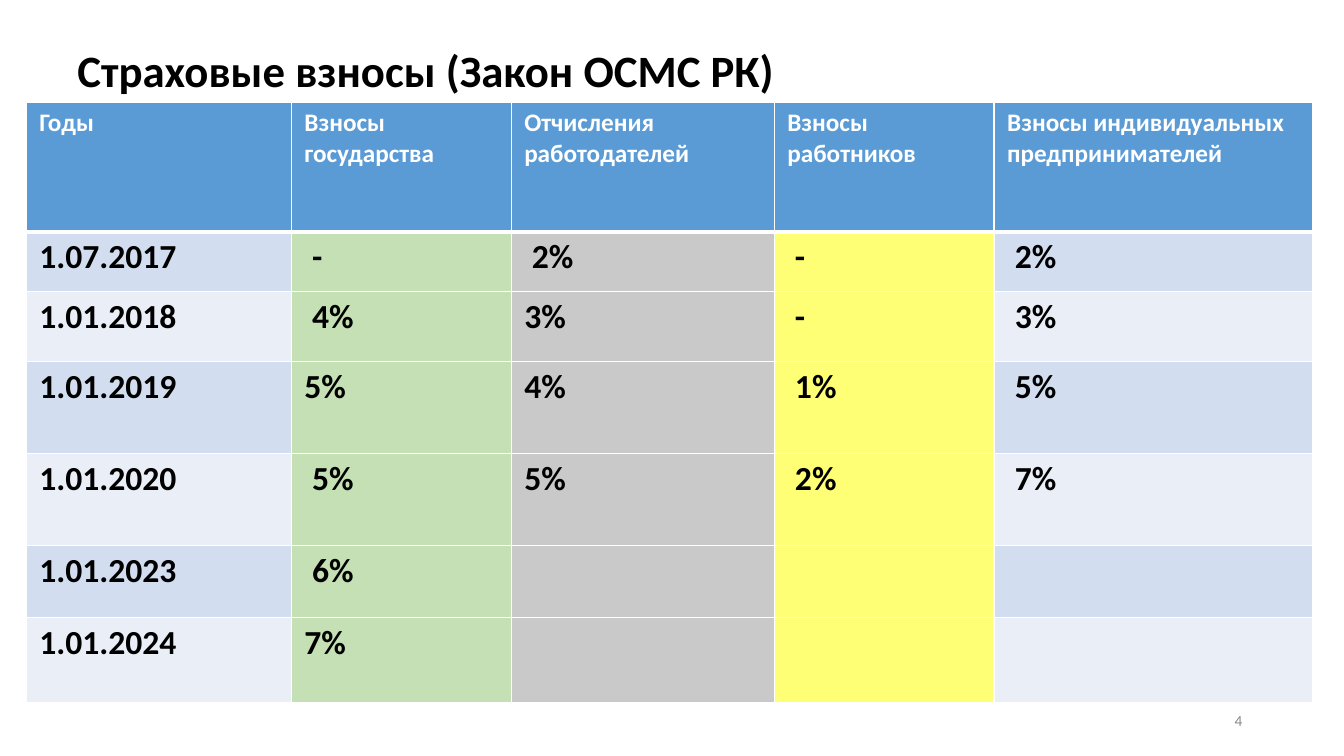
import lxml.etree
import pptx
import pptx.dml.color
import pptx.enum.text
import pptx.oxml.ns
import pptx.util

Inches = pptx.util.Inches
RGBColor = pptx.dml.color.RGBColor
Align = pptx.enum.text.PP_ALIGN
Anchor = pptx.enum.text.MSO_ANCHOR

FONT = "Calibri"
BLACK = RGBColor(0x00, 0x00, 0x00)
WHITE = RGBColor(0xFF, 0xFF, 0xFF)
GRAY = RGBColor(0x8C, 0x8C, 0x8C)
HEADER_BLUE = RGBColor(0x5B, 0x9B, 0xD5)
BAND_DARK = RGBColor(0xD2, 0xDE, 0xEF)
BAND_LIGHT = RGBColor(0xEA, 0xEF, 0xF7)
STATE_GREEN = RGBColor(0xC5, 0xE0, 0xB4)
EMPLOYER_GRAY = RGBColor(0xC9, 0xC9, 0xC9)
WORKER_YELLOW = RGBColor(0xFF, 0xFF, 0x75)

# Columns without a fixed colour follow the row bands
COLUMN_FILLS = [None, STATE_GREEN, EMPLOYER_GRAY, WORKER_YELLOW, None]
COLUMN_WIDTHS = [2.63, 2.18, 2.61, 2.18, 3.16]
ROW_HEIGHTS = [1.28, 0.59, 0.7, 0.91, 0.91, 0.72, 0.84]
CONTRIBUTIONS = [
    ["Годы", "Взносы государства", "Отчисления работодателей",
     "Взносы работников", "Взносы индивидуальных предпринимателей"],
    ["1.07.2017", " -", " 2%", " -", " 2%"],
    ["1.01.2018", " 4%", "3%", " -", " 3%"],
    ["1.01.2019", "5%", "4%", " 1%", " 5%"],
    ["1.01.2020", " 5%", "5%", " 2%", " 7%"],
    ["1.01.2023", " 6%", "", "", ""],
    ["1.01.2024", "7%", "", "", ""],
]


def write_text(frame, text, size, color=BLACK, bold=False, align=Align.LEFT,
               line_spacing=1.0):
    paragraph = frame.paragraphs[0]
    paragraph.alignment = align
    paragraph.line_spacing = line_spacing
    run = paragraph.add_run()
    run.text = text
    run.font.name = FONT
    run.font.size = pptx.util.Pt(size)
    run.font.bold = bold
    run.font.color.rgb = color


def add_label(slide, left, top, width, height, text, **text_format):
    box = slide.shapes.add_textbox(Inches(left), Inches(top),
                                   Inches(width), Inches(height))
    box.text_frame.word_wrap = True
    box.text_frame.vertical_anchor = Anchor.MIDDLE
    write_text(box.text_frame, text, **text_format)


def set_borders(cell, bottom_width):
    """Draw white cell borders; widths are in points."""
    properties = cell._tc.get_or_add_tcPr()
    widths = {"a:lnL": 1, "a:lnR": 1, "a:lnT": 1, "a:lnB": bottom_width}
    for position, (side, width) in enumerate(widths.items()):
        line = lxml.etree.Element(pptx.oxml.ns.qn(side),
                                  w=str(pptx.util.Pt(width)))
        fill = lxml.etree.SubElement(line, pptx.oxml.ns.qn("a:solidFill"))
        lxml.etree.SubElement(fill, pptx.oxml.ns.qn("a:srgbClr"), val=str(WHITE))
        properties.insert(position, line)


def fill_cell(cell, text, fill, is_header):
    cell.margin_left = cell.margin_right = Inches(0.13)
    cell.margin_top = cell.margin_bottom = Inches(0.05)
    cell.fill.solid()
    cell.fill.fore_color.rgb = fill
    set_borders(cell, bottom_width=3 if is_header else 1)
    if text:
        write_text(cell.text_frame, text, size=18 if is_header else 24,
                   color=WHITE if is_header else BLACK, bold=True)


def add_contributions_table(slide, left, top):
    table = slide.shapes.add_table(
        len(ROW_HEIGHTS), len(COLUMN_WIDTHS), Inches(left), Inches(top),
        Inches(sum(COLUMN_WIDTHS)), Inches(sum(ROW_HEIGHTS))).table
    table.first_row = table.horz_banding = False
    for column, width in zip(table.columns, COLUMN_WIDTHS):
        column.width = Inches(width)
    for row, height in zip(table.rows, ROW_HEIGHTS):
        row.height = Inches(height)
    for row_index, texts in enumerate(CONTRIBUTIONS):
        is_header = row_index == 0
        band = BAND_DARK if row_index % 2 else BAND_LIGHT
        for column_index, text in enumerate(texts):
            fill = HEADER_BLUE if is_header else COLUMN_FILLS[column_index] or band
            fill_cell(table.cell(row_index, column_index), text, fill, is_header)


def main():
    presentation = pptx.Presentation()
    presentation.slide_width = Inches(13.33)
    presentation.slide_height = Inches(7.5)
    slide = presentation.slides.add_slide(presentation.slide_layouts[6])

    # Title
    add_label(slide, 0.67, 0.3, 12, 0.85, "Страховые взносы (Закон ОСМС РК)",
              size=32, bold=True, line_spacing=0.9)
    # Contribution rates by year
    add_contributions_table(slide, 0.26, 1.02)
    # Slide number
    add_label(slide, 9.42, 6.95, 3, 0.4, "4", size=11, color=GRAY,
              align=Align.RIGHT)

    presentation.save("out.pptx")


if __name__ == "__main__":
    main()
